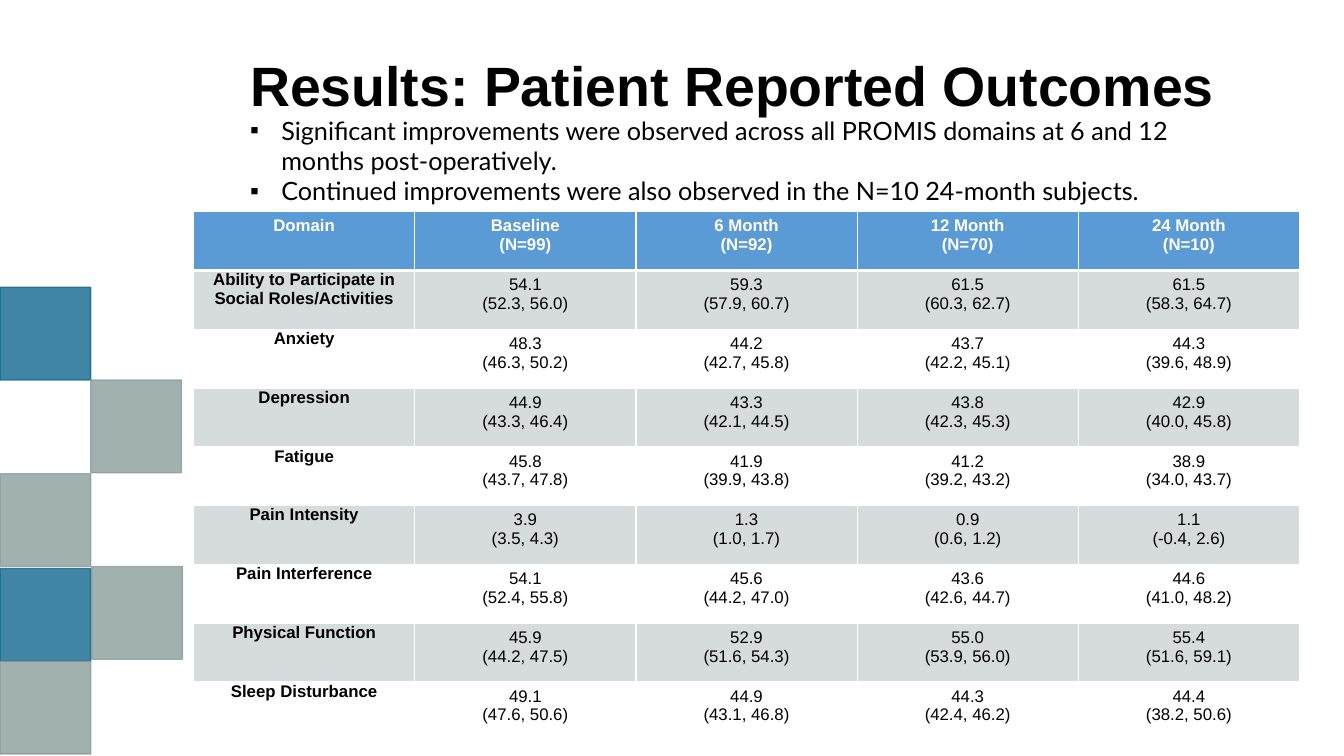
from lxml import etree
from pptx import Presentation
from pptx.dml.color import RGBColor as RGB
from pptx.enum.shapes import MSO_SHAPE as SHAPE
from pptx.enum.text import MSO_ANCHOR as ANCHOR, MSO_AUTO_SIZE as AUTO, PP_ALIGN as ALIGN
from pptx.oxml.ns import qn
from pptx.util import Inches, Pt


def paint(color, value, alpha=None):
    color.rgb = RGB.from_string(value)
    if alpha:
        clr = color._xFill.find(qn("a:srgbClr"))
        etree.SubElement(clr, qn("a:alpha"), val=str(alpha * 1000))


def style(p, value, fmt, align=ALIGN.LEFT, spacing=1.0):
    for name, val in dict(alignment=align, line_spacing=spacing, space_before=Pt(0)).items():
        setattr(p, name, val)
    for r in p.runs:
        for name, val in fmt.items():
            setattr(r.font, name, val)
        paint(r.font.color, value)


BLUE, SAGE, BLACK, WHITE = "005D85", "829794", "000000", "FFFFFF"
HEAD, BAND = "5B9BD5", "D6DCDB"

prs = Presentation()
prs.slide_width, prs.slide_height = Inches(13.33), Inches(7.5)
s = prs.slides.add_slide(prs.slide_layouts[1])

squares = [
    (0, 2.85, BLUE), (0, 5.64, BLUE), (0, 6.56, SAGE),
    (0.9, 3.77, SAGE), (0.91, 5.62, SAGE), (0, 4.7, SAGE),
]
for x, y, value in squares:
    sp = s.shapes.add_shape(SHAPE.RECTANGLE, Inches(x), Inches(y), Inches(0.9), Inches(0.92))
    sp.shadow.inherit = False
    sp.line.width = Pt(1)
    for fill in (sp.fill, sp.line.fill):
        fill.solid()
        paint(fill.fore_color, value, 75)

title, body = s.placeholders
for sp, box in ((title, (2.38, 0.37, 10.04, 1.02)), (body, (2.38, 1.09, 9.53, 1.01))):
    for name, val in zip(("left", "top", "width", "height"), box):
        setattr(sp, name, Inches(val))

tf = title.text_frame
tf.text = "Results: Patient Reported Outcomes"
for name, val in dict(word_wrap=True, auto_size=AUTO.NONE, vertical_anchor=ANCHOR.MIDDLE).items():
    setattr(tf, name, val)
style(tf.paragraphs[0], BLACK, dict(name="Arial", size=Pt(39.6), bold=True), spacing=0.9)

tf = body.text_frame
tf.text = "\n".join([
    "Significant improvements were observed across all PROMIS domains at 6 and 12 months post-operatively.",
    "Continued improvements were also observed in the N=10 24-month subjects.",
])
for name, val in dict(word_wrap=True, auto_size=AUTO.SHAPE_TO_FIT_TEXT, vertical_anchor=ANCHOR.TOP).items():
    setattr(tf, name, val)
for p in tf.paragraphs:
    pPr = p._p.get_or_add_pPr()
    pPr.set("marL", str(Inches(0.31)))
    pPr.set("indent", str(-Inches(0.31)))
    etree.SubElement(pPr, qn("a:buFont"), typeface="Arial")
    etree.SubElement(pPr, qn("a:buChar"), char="▪")
    style(p, BLACK, dict(name="Lato", size=Pt(18)))

rows = [
    ("Domain", "Baseline\n(N=99)", "6 Month\n(N=92)", "12 Month\n(N=70)", "24 Month\n(N=10)"),
    ("Ability to Participate in Social Roles/Activities",
     "54.1\n(52.3, 56.0)", "59.3\n(57.9, 60.7)", "61.5\n(60.3, 62.7)", "61.5\n(58.3, 64.7)"),
    ("Anxiety", "48.3\n(46.3, 50.2)", "44.2\n(42.7, 45.8)", "43.7\n(42.2, 45.1)", "44.3\n(39.6, 48.9)"),
    ("Depression", "44.9\n(43.3, 46.4)", "43.3\n(42.1, 44.5)", "43.8\n(42.3, 45.3)", "42.9\n(40.0, 45.8)"),
    ("Fatigue", "45.8\n(43.7, 47.8)", "41.9\n(39.9, 43.8)", "41.2\n(39.2, 43.2)", "38.9\n(34.0, 43.7)"),
    ("Pain Intensity", "3.9\n(3.5, 4.3)", "1.3\n(1.0, 1.7)", "0.9\n(0.6, 1.2)", "1.1\n(-0.4, 2.6)"),
    ("Pain Interference", "54.1\n(52.4, 55.8)", "45.6\n(44.2, 47.0)", "43.6\n(42.6, 44.7)", "44.6\n(41.0, 48.2)"),
    ("Physical Function", "45.9\n(44.2, 47.5)", "52.9\n(51.6, 54.3)", "55.0\n(53.9, 56.0)", "55.4\n(51.6, 59.1)"),
    ("Sleep Disturbance", "49.1\n(47.6, 50.6)", "44.9\n(43.1, 46.8)", "44.3\n(42.4, 46.2)", "44.4\n(38.2, 50.6)"),
]
table = s.shapes.add_table(
    len(rows), len(rows[0]), Inches(1.92), Inches(2.1), Inches(10.97), Inches(5.25)).table
for i, row in enumerate(rows):
    for j, text in enumerate(row):
        cell = table.cell(i, j)
        cell.text = text
        if i and j == 0:
            for side, val in dict(left=0.06, top=0, right=0.06, bottom=0).items():
                setattr(cell, f"margin_{side}", Inches(val))
        for p in cell.text_frame.paragraphs:
            style(p, BLACK if i else WHITE,
                  dict(name="Arial", size=Pt(12), bold=i == 0 or j == 0), ALIGN.CENTER)
        tcPr = cell._tc.get_or_add_tcPr()
        for side in "LRTB":
            thick = (i, side) in ((0, "B"), (1, "T"))
            ln = etree.SubElement(tcPr, qn(f"a:ln{side}"), w=str(Pt(3 if thick else 1)))
            etree.SubElement(etree.SubElement(ln, qn("a:solidFill")), qn("a:srgbClr"), val=WHITE)
        cell.fill.solid()
        paint(cell.fill.fore_color, HEAD if i == 0 else BAND if i % 2 else WHITE)

prs.save("out.pptx")
